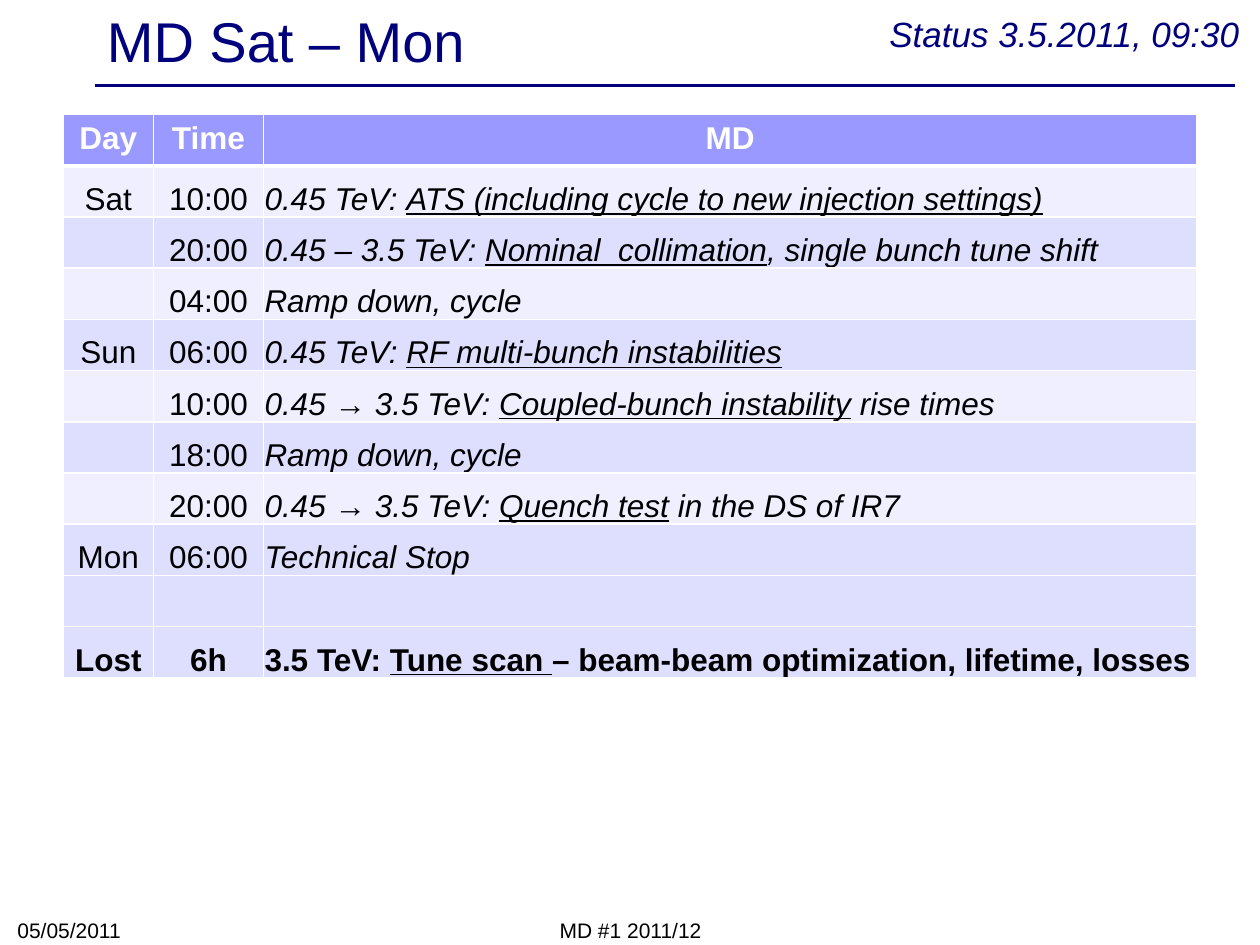
from lxml.etree import SubElement
from pptx import Presentation
from pptx.dml.color import RGBColor
from pptx.enum.shapes import MSO_CONNECTOR
from pptx.enum.text import MSO_ANCHOR, PP_ALIGN
from pptx.oxml.ns import qn
from pptx.util import Inches, Pt

NAVY = RGBColor(0x00, 0x00, 0x7D)
BLACK = RGBColor(0x00, 0x00, 0x00)
WHITE = RGBColor(0xFF, 0xFF, 0xFF)
HEADER_BLUE = RGBColor(0x99, 0x99, 0xFF)
PALE = RGBColor(0xEF, 0xEF, 0xFF)
LILAC = RGBColor(0xDE, 0xDE, 0xFF)

FONT = "Arial"
HEADINGS = ("Day", "Time", "MD")
COLUMN_WIDTHS = (0.72, 0.87, 7.41)
TABLE_HEIGHT = 4.47

# Each activity lists plain, underlined and plain text in turn.
SCHEDULE = (
    ("Sat", "10:00", ("0.45 TeV: ", "ATS (including cycle to new injection settings)"), PALE),
    ("", "20:00", ("0.45 – 3.5 TeV: ", "Nominal  collimation", ", single bunch tune shift"), LILAC),
    ("", "04:00", ("Ramp down, cycle",), PALE),
    ("Sun", "06:00", ("0.45 TeV: ", "RF multi-bunch instabilities"), LILAC),
    ("", "10:00", ("0.45 → 3.5 TeV: ", "Coupled-bunch instability", " rise times"), PALE),
    ("", "18:00", ("Ramp down, cycle",), LILAC),
    ("", "20:00", ("0.45 → 3.5 TeV: ", "Quench test", " in the DS of IR7"), PALE),
    ("Mon", "06:00", ("Technical Stop",), LILAC),
    ("", "", (), LILAC),
    ("Lost", "6h", ("3.5 TeV: ", "Tune scan ", "– beam-beam optimization, lifetime, losses"), LILAC),
)


def add_run(paragraph, text, size, color, bold=False, italic=False, underline=False):
    """Append one formatted run to a paragraph."""
    run = paragraph.add_run()
    run.text = text
    font = run.font
    font.name, font.size = FONT, Pt(size)
    font.bold, font.italic, font.underline = bold, italic, underline
    font.color.rgb = color


def add_label(slide, text, box, size, color, anchor=MSO_ANCHOR.TOP,
              align=PP_ALIGN.LEFT, italic=False, wrap=True):
    """Add a one-line text box."""
    frame = slide.shapes.add_textbox(*map(Inches, box)).text_frame
    frame.word_wrap = wrap
    frame.vertical_anchor = anchor
    paragraph = frame.paragraphs[0]
    paragraph.alignment = align
    add_run(paragraph, text, size, color, italic=italic)


def add_title_rule(slide):
    """Draw the line below the title."""
    rule = slide.shapes.add_connector(
        MSO_CONNECTOR.STRAIGHT, Inches(0.75), Inches(0.68), Inches(9.8), Inches(0.68))
    rule.line.color.rgb = NAVY
    rule.line.width = Pt(2)
    SubElement(rule._element.spPr, qn("a:effectLst"))


def style_cell(cell, fill, top=1, bottom=1):
    """Give a cell white borders and a solid fill."""
    properties = cell._tc.get_or_add_tcPr()
    for side, width in (("L", 1), ("R", 1), ("T", top), ("B", bottom)):
        border = SubElement(properties, qn(f"a:ln{side}"), w=str(Pt(width)))
        solid = SubElement(border, qn("a:solidFill"))
        SubElement(solid, qn("a:srgbClr"), val=str(WHITE))
    cell.fill.solid()
    cell.fill.fore_color.rgb = fill


def write_cell(cell, parts, align, color=BLACK, bold=False, italic=False):
    """Write the parts of a cell, underlining every second one."""
    paragraph = cell.text_frame.paragraphs[0]
    paragraph.alignment = align
    for index, part in enumerate(parts):
        add_run(paragraph, part, 18, color, bold, italic, underline=index % 2 == 1)


def fit_to_bottom(cell):
    """Set the text tight against the bottom of its cell."""
    cell.vertical_anchor = MSO_ANCHOR.BOTTOM
    cell.margin_left = cell.margin_right = cell.margin_top = Inches(0.01)
    cell.margin_bottom = 0


def add_schedule(slide):
    """Add the table of machine development sessions."""
    table = slide.shapes.add_table(
        len(SCHEDULE) + 1, len(HEADINGS),
        Inches(0.5), Inches(0.91), Inches(9), Inches(TABLE_HEIGHT)).table
    table.horz_banding = False
    for column, width in zip(table.columns, COLUMN_WIDTHS):
        column.width = Inches(width)
    for column, heading in enumerate(HEADINGS):
        cell = table.cell(0, column)
        style_cell(cell, HEADER_BLUE, bottom=3)
        write_cell(cell, (heading,), PP_ALIGN.CENTER, WHITE, bold=True)
    for row, (day, time, activity, fill) in enumerate(SCHEDULE, start=1):
        lost = day == "Lost"
        for column, parts in enumerate(((day,), (time,), activity)):
            cell = table.cell(row, column)
            style_cell(cell, fill, top=3 if row == 1 else 1)
            if not any(parts):
                continue
            fit_to_bottom(cell)
            is_activity = column == 2
            write_cell(cell, parts, PP_ALIGN.LEFT if is_activity else PP_ALIGN.CENTER,
                       bold=lost, italic=is_activity and not lost)


def main():
    """Build and save the slide."""
    deck = Presentation()
    deck.slide_width, deck.slide_height = Inches(10), Inches(7.5)
    slide = deck.slides.add_slide(deck.slide_layouts[6])
    add_title_rule(slide)
    add_label(slide, "MD Sat – Mon", (0.75, 0.03, 9, 0.57), 32, NAVY, MSO_ANCHOR.MIDDLE)
    add_schedule(slide)
    add_label(slide, "MD #1 2011/12", (3.42, 7.25, 3.17, 0.28), 12, BLACK,
              MSO_ANCHOR.BOTTOM, PP_ALIGN.CENTER)
    add_label(slide, "Status 3.5.2011, 09:30", (6.96, 0.05, 3.07, 0.44), 20, NAVY,
              italic=True, wrap=False)
    add_label(slide, "05/05/2011", (0.04, 7.24, 2.33, 0.29), 12, BLACK, MSO_ANCHOR.BOTTOM)
    deck.save("out.pptx")


if __name__ == "__main__":
    main()
